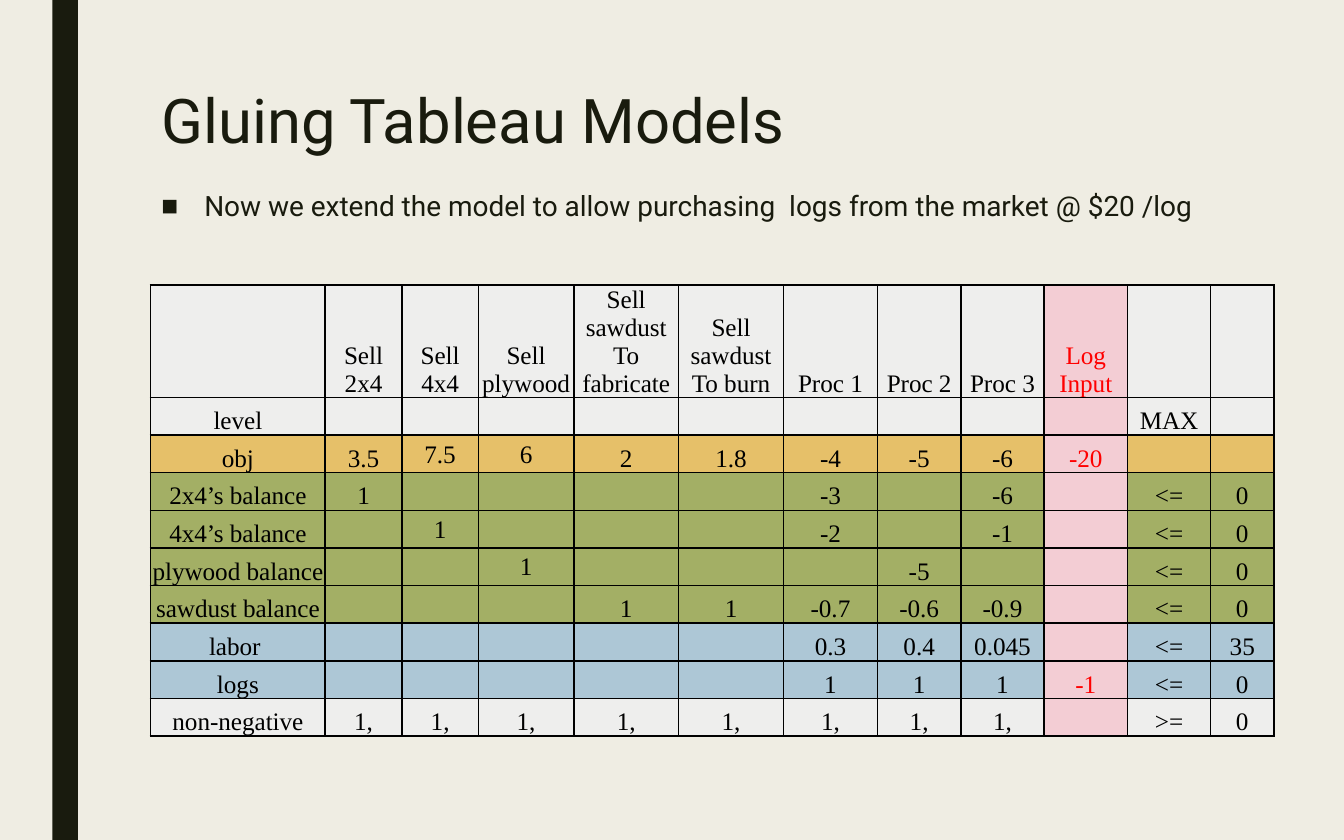
from lxml import etree
from pptx import Presentation
from pptx.dml.color import RGBColor
from pptx.enum.shapes import MSO_SHAPE
from pptx.enum.text import MSO_ANCHOR, MSO_AUTO_SIZE, PP_ALIGN
from pptx.oxml.ns import qn
from pptx.util import Inches, Pt

RECTANGLE = MSO_SHAPE.RECTANGLE
TOP, MIDDLE, BOTTOM = MSO_ANCHOR.TOP, MSO_ANCHOR.MIDDLE, MSO_ANCHOR.BOTTOM
CENTER, LEFT = PP_ALIGN.CENTER, PP_ALIGN.LEFT
NO_AUTOFIT = MSO_AUTO_SIZE.NONE

COLORS = {
    "page": "EFEDE3", "dark": "191B0E", "black": "000000", "red": "FF0000",
    "plain": "EEEEED", "objective": "E6C069", "balance": "A3AF65",
    "resource": "ADC7D6", "new": "F3CDD4",
}
TABLE_SIZE = 13.5
NEW_COLUMN = 9
COLUMN_WIDTHS = [1.3, 0.57, 0.57, 0.71, 0.78, 0.78, 0.7, 0.62, 0.62, 0.62, 0.62, 0.47]
HEADER_HEIGHT, ROW_HEIGHT = 0.82, 0.28
MIDDLE_CELLS = {(2, 2), (2, 3), (4, 2), (5, 3)}
ROWS = [
    ("plain", ["", "Sell 2x4", "Sell 4x4", "Sell plywood", "Sell sawdust\nTo fabricate",
               "Sell sawdust\nTo burn", "Proc 1", "Proc 2", "Proc 3", "Log Input", "", ""]),
    ("plain", ["level"] + [""] * 9 + ["MAX", ""]),
    ("objective", ["obj", "3.5", "7.5", "6", "2", "1.8", "-4", "-5", "-6", "-20", "", ""]),
    ("balance", ["2x4’s balance", "1", "", "", "", "", "-3", "", "-6", "", "<=", "0"]),
    ("balance", ["4x4’s balance", "", "1", "", "", "", "-2", "", "-1", "", "<=", "0"]),
    ("balance", ["plywood balance", "", "", "1", "", "", "", "-5", "", "", "<=", "0"]),
    ("balance", ["sawdust balance", "", "", "", "1", "1", "-0.7", "-0.6", "-0.9", "", "<=", "0"]),
    ("resource", ["labor ", "", "", "", "", "", "0.3", "0.4", "0.045", "", "<=", "35"]),
    ("resource", ["logs", "", "", "", "", "", "1", "1", "1", "-1", "<=", "0"]),
    ("plain", ["non-negative"] + ["1,"] * 8 + ["", ">=", "0"]),
]


def add_span(para, text, size, font, color):
    span = para.add_run()
    span.text = text
    span.font.size = Pt(size)
    span.font.name = font
    span.font.color.rgb = RGBColor.from_string(COLORS[color])


def add_borders(cell):
    properties = cell._tc.get_or_add_tcPr()
    for side in ("lnL", "lnR", "lnT", "lnB"):
        line = etree.SubElement(properties, qn(f"a:{side}"), w=str(Pt(1)))
        fill = etree.SubElement(line, qn("a:solidFill"))
        etree.SubElement(fill, qn("a:srgbClr"), val=COLORS["black"])


deck = Presentation()
deck.slide_width, deck.slide_height = Inches(10), Inches(6.25)
page = deck.slides.add_slide(deck.slide_layouts[1])
page.background.fill.solid()
page.background.fill.fore_color.rgb = RGBColor.from_string(COLORS["page"])

bar = page.shapes.add_shape(RECTANGLE, Inches(0.39), Inches(0), Inches(0.19), Inches(6.25))
bar.shadow.inherit = False
bar.fill.solid()
bar.fill.fore_color.rgb = RGBColor.from_string(COLORS["dark"])
bar.line.fill.background()

title, body = page.shapes.title, page.placeholders[1]
for box, top, height, anchor, text, size, spacing in [
    (title, 0.63, 0.58, MIDDLE, "Gluing Tableau Models", 33, 0.89),
    (body, 1.38, 3.97, TOP,
     "Now we extend the model to allow purchasing  logs from the market @ $20 /log", 15, 0.94),
]:
    box.left, box.top = Inches(1.12), Inches(top)
    box.width, box.height = Inches(7.88), Inches(height)
    frame = box.text_frame
    frame.word_wrap = True
    frame.auto_size = NO_AUTOFIT
    frame.vertical_anchor = anchor
    frame.margin_left = frame.margin_right = Inches(0.08)
    frame.margin_top = frame.margin_bottom = Inches(0.04)
    para = frame.paragraphs[0]
    para.alignment = LEFT
    para.line_spacing = spacing
    add_span(para, text, size, "Roboto", "dark")

bullet_para = body.text_frame.paragraphs[0]
bullet_para.space_before, bullet_para.space_after = Pt(7.5), Pt(1.5)
bullet = bullet_para._p.get_or_add_pPr()
bullet.set("marL", str(Inches(0.32)))
bullet.set("indent", str(Inches(-0.32)))
etree.SubElement(bullet, qn("a:buFont"), typeface="Arial")
etree.SubElement(bullet, qn("a:buChar"), char="■")

table = page.shapes.add_table(
    len(ROWS), len(COLUMN_WIDTHS), Inches(1.12), Inches(2.12),
    Inches(sum(COLUMN_WIDTHS)), Inches(HEADER_HEIGHT + ROW_HEIGHT * (len(ROWS) - 1)),
).table
table.first_row = table.horz_banding = False
for column, width in zip(table.columns, COLUMN_WIDTHS):
    column.width = Inches(width)

for r, (band, texts) in enumerate(ROWS):
    table.rows[r].height = Inches(ROW_HEIGHT if r else HEADER_HEIGHT)
    for c, text in enumerate(texts):
        is_new = c == NEW_COLUMN
        cell = table.cell(r, c)
        add_borders(cell)
        cell.fill.solid()
        cell.fill.fore_color.rgb = RGBColor.from_string(COLORS["new" if is_new else band])
        cell.margin_left = cell.margin_right = cell.margin_top = Inches(0.01)
        cell.margin_bottom = Inches(0)
        cell.vertical_anchor = MIDDLE if (r, c) in MIDDLE_CELLS else BOTTOM
        for i, line in enumerate(text.split("\n")):
            para = cell.text_frame.add_paragraph() if i else cell.text_frame.paragraphs[0]
            para.alignment = CENTER
            if line:
                add_span(para, line, TABLE_SIZE, "Times New Roman", "red" if is_new else "black")
            else:
                etree.SubElement(para._p, qn("a:endParaRPr"), sz=str(int(TABLE_SIZE * 100)))

deck.save("out.pptx")
